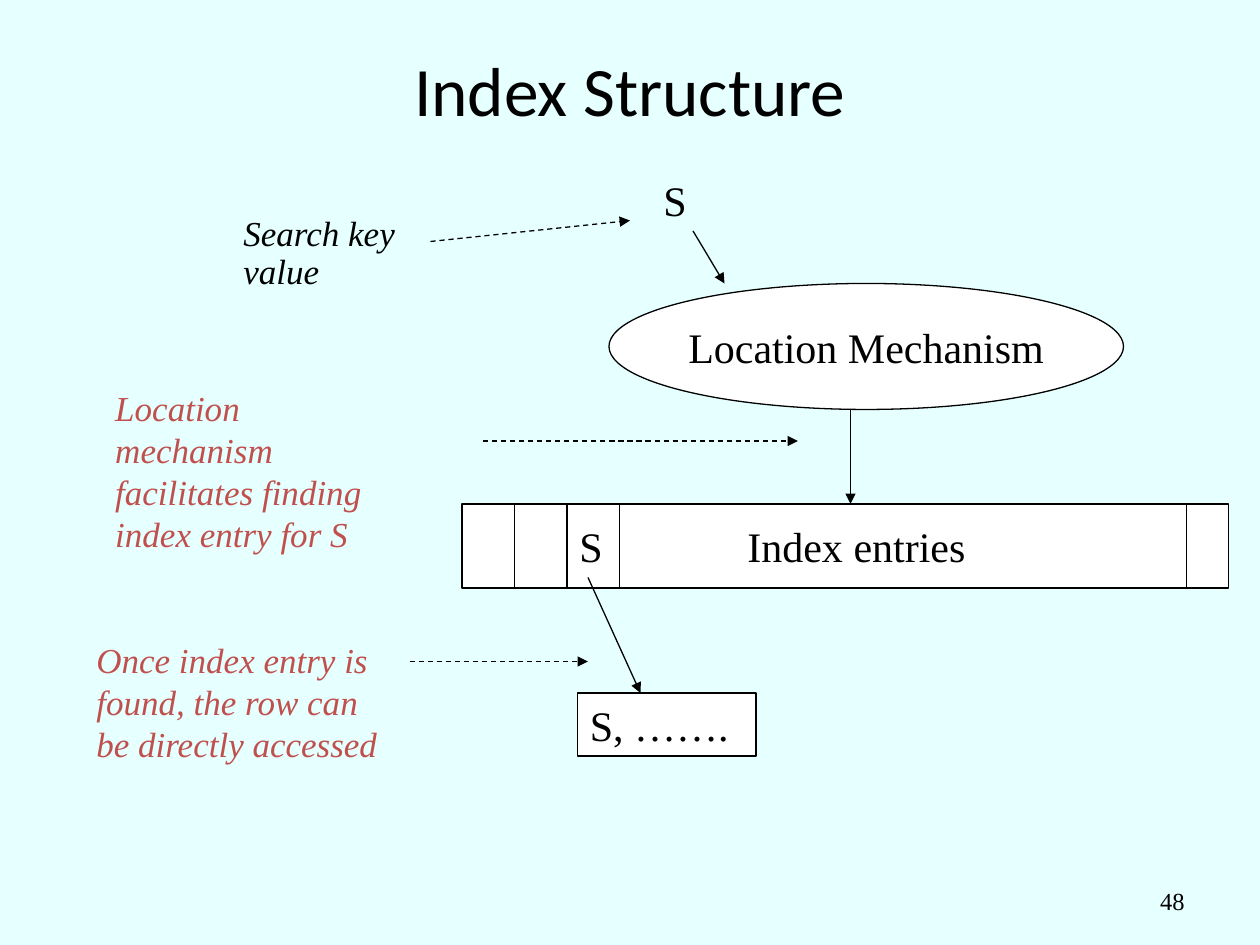
"""Build the Index Structure slide on a grid of twelve cells to the inch."""
import pptx
import pptx.dml.color
import pptx.enum.dml
import pptx.enum.shapes
import pptx.enum.text
import pptx.oxml
import pptx.oxml.ns
import pptx.util
from dataclasses import dataclass

ALIGN = pptx.enum.text.PP_ALIGN
ANCHOR = pptx.enum.text.MSO_ANCHOR
SHAPE = pptx.enum.shapes.MSO_SHAPE


@dataclass(frozen=True)
class Theme:
    heading: str = "Calibri"
    body: str = "Times New Roman"
    ground: str = "E6FFFF"
    ink: str = "000000"
    paper: str = "FFFFFF"
    accent: str = "C0504D"
    title: float = 39.6
    label: float = 24
    note: float = 20
    number: float = 14
    stroke: float = 0.75


THEME = Theme()
COLUMNS, ROWS, CELLS_PER_INCH = 120, 90, 12

TITLE = ("Index Structure", (9, 4, 102, 9))
PAGE_NUMBER = ("48", (86, 83.4, 28, 4.8))
MECHANISM = ("Location Mechanism", (58, 27, 49, 12))
INDEX_BAR = (44, 48, 73, 8)
ENTRY_DIVIDERS = [49, 54, 59, 113]
DATA_ROW = (55, 66, 17, 6)
LABELS = [
    ("Index entries", (70, 49, 23.2, 6)),
    ("S", (62, 16, 4.7, 6)),
    ("S", (54, 49, 4.7, 6)),
    ("S, …….", (55, 66, 15.6, 6)),
]
KEY_NOTE = ("Search key\nvalue", (22, 20, 16.9, 8.4))
STEP_NOTES = [
    ("Location mechanism\nfacilitates finding\nindex entry for S", (9.8, 36.2, 30, 13.2)),
    ("Once index entry is found, the row can be directly accessed", (8, 60.2, 31, 13.2)),
]
FLOW_ARROWS = [(66, 22, 69, 27), (81, 39, 81, 48), (56, 55, 61, 66)]
NOTE_ARROWS = [(41, 23, 60, 21), (46, 42, 76, 42), (39, 63, 56, 63)]


def cells(values):
    return [pptx.util.Inches(value / CELLS_PER_INCH) for value in values]


def rgb(code):
    return pptx.dml.color.RGBColor.from_string(code)


def write(frame, text, size=THEME.label, font=THEME.body, color=THEME.ink, italic=False,
          align=ALIGN.LEFT, anchor=ANCHOR.TOP, wrap=False, spacing=None):
    frame.text = text
    frame.word_wrap = wrap
    frame.vertical_anchor = anchor
    for paragraph in frame.paragraphs:
        paragraph.alignment = align
        paragraph.line_spacing = spacing
        for run in paragraph.runs:
            run.font.size = pptx.util.Pt(size)
            run.font.name = font
            run.font.italic = italic
            run.font.color.rgb = rgb(color)


def add_label(slide, text, area, **style):
    write(slide.shapes.add_textbox(*cells(area)).text_frame, text, **style)


def add_outline(slide, kind, area):
    outline = slide.shapes.add_shape(kind, *cells(area))
    outline.shadow.inherit = False
    outline.fill.solid()
    outline.fill.fore_color.rgb = rgb(THEME.paper)
    outline.line.color.rgb = rgb(THEME.ink)
    outline.line.width = pptx.util.Pt(THEME.stroke)
    return outline


def add_line(slide, ends, arrow=True, dashed=False):
    straight = pptx.enum.shapes.MSO_CONNECTOR.STRAIGHT
    link = slide.shapes.add_connector(straight, *cells(ends))
    link.line.color.rgb = rgb(THEME.ink)
    link.line.width = pptx.util.Pt(THEME.stroke)
    if dashed:
        link.line.dash_style = pptx.enum.dml.MSO_LINE.DASH
    if arrow:
        head = pptx.oxml.parse_xml(f'<a:tailEnd {pptx.oxml.ns.nsdecls("a")} type="triangle"/>')
        link.line._get_or_add_ln().append(head)
    properties = link._element.spPr
    properties.append(pptx.oxml.parse_xml(f'<a:effectLst {pptx.oxml.ns.nsdecls("a")}/>'))


def main():
    deck = pptx.Presentation()
    deck.slide_width, deck.slide_height = cells((COLUMNS, ROWS))
    slide = deck.slides.add_slide(deck.slide_layouts[5])
    slide.background.fill.solid()
    slide.background.fill.fore_color.rgb = rgb(THEME.ground)

    heading, area = TITLE
    title = slide.shapes.title
    title.left, title.top, title.width, title.height = cells(area)
    write(title.text_frame, heading, size=THEME.title, font=THEME.heading,
          align=ALIGN.CENTER, anchor=ANCHOR.MIDDLE, wrap=True)
    add_label(slide, *PAGE_NUMBER, size=THEME.number, align=ALIGN.RIGHT,
              anchor=ANCHOR.MIDDLE, wrap=True)

    name, area = MECHANISM
    mechanism = add_outline(slide, SHAPE.OVAL, area)
    write(mechanism.text_frame, name, align=ALIGN.CENTER, anchor=ANCHOR.MIDDLE)
    for area in (INDEX_BAR, DATA_ROW):
        add_outline(slide, SHAPE.RECTANGLE, area)
    bar_top, bar_bottom = INDEX_BAR[1], INDEX_BAR[1] + INDEX_BAR[3]
    for column in ENTRY_DIVIDERS:
        add_line(slide, (column, bar_top, column, bar_bottom), arrow=False)

    for text, area in LABELS:
        add_label(slide, text, area)
    add_label(slide, *KEY_NOTE, size=THEME.note, italic=True, spacing=0.9)
    for text, area in STEP_NOTES:
        add_label(slide, text, area, size=THEME.note, color=THEME.accent, italic=True, wrap=True)
    for ends in FLOW_ARROWS:
        add_line(slide, ends)
    for ends in NOTE_ARROWS:
        add_line(slide, ends, dashed=True)

    deck.save("out.pptx")


if __name__ == "__main__":
    main()
